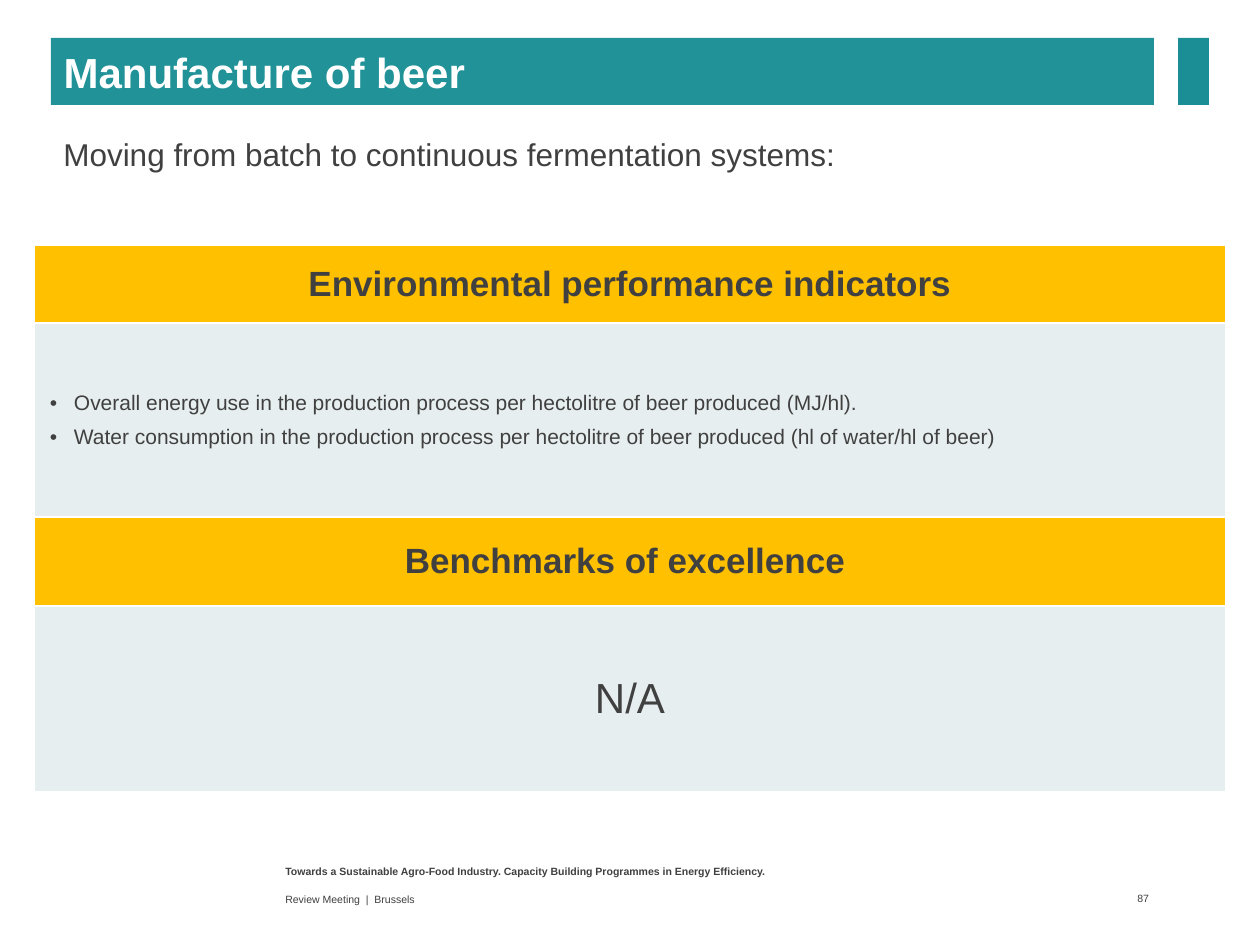
from dataclasses import dataclass

from lxml import etree
from pptx import Presentation
from pptx import util as u
from pptx.dml.color import RGBColor
from pptx.enum import shapes, text
from pptx.oxml import ns

SCALE = 914400 / 126


@dataclass(frozen=True)
class Theme:
    font: str = "Arial"
    ink: str = "404040"
    white: str = "FFFFFF"
    bar: str = "209298"
    tab: str = "1B8E95"
    header: str = "FFC000"
    body: str = "E7EEEF"
    title_size: int = 24
    header_size: int = 20
    lead_size: int = 18
    bullet_size: int = 12
    footer_size: int = 6


THEME = Theme()
ALIGN = text.PP_ALIGN
MIDDLE = text.MSO_ANCHOR.MIDDLE


def px(n):
    return u.Emu(round(n * SCALE))


def fill(target, color):
    target.fill.solid()
    target.fill.fore_color.rgb = RGBColor.from_string(color)


def style(p, size, color=THEME.ink, bold=False, align=ALIGN.LEFT):
    p.alignment = align
    for r in p.runs:
        r.font.name = THEME.font
        r.font.size = u.Pt(size)
        r.font.bold = bold
        r.font.color.rgb = RGBColor.from_string(color)


def add_label(s, box, words, size, bold=False, align=ALIGN.LEFT, anchor=MIDDLE):
    sp = s.shapes.add_textbox(*map(px, box))
    tf = sp.text_frame
    tf.word_wrap = True
    tf.vertical_anchor = anchor
    tf.text = words
    style(tf.paragraphs[0], size, bold=bold, align=align)
    return tf


def add_title(s, box, words):
    x, y, w, h = box
    sp = s.shapes.title
    sp.left, sp.top, sp.width, sp.height = map(px, (x, y, w - 55, h))
    fill(sp, THEME.bar)
    tf = sp.text_frame
    tf.text = words
    tf.word_wrap = True
    tf.auto_size = text.MSO_AUTO_SIZE.NONE
    tf.vertical_anchor = MIDDLE
    style(tf.paragraphs[0], THEME.title_size, THEME.white, True)

    tab = s.shapes.add_shape(shapes.MSO_SHAPE.RECTANGLE, *map(px, (x + w - 31, y, 31, h)))
    tab.shadow.inherit = False
    fill(tab, THEME.tab)
    tab.line.fill.background()


def add_borders(cell):
    tc_pr = cell._tc.get_or_add_tcPr()
    for i, side in enumerate(("lnL", "lnR", "lnT", "lnB")):
        ln = etree.Element(ns.qn(f"a:{side}"), w=str(u.Pt(1)))
        solid = etree.SubElement(ln, ns.qn("a:solidFill"))
        etree.SubElement(solid, ns.qn("a:srgbClr"), val=THEME.white)
        tc_pr.insert(i, ln)


def add_bullet(p, indent):
    p_pr = p._p.get_or_add_pPr()
    p_pr.set("marL", str(px(indent)))
    p_pr.set("indent", str(-px(indent)))
    etree.SubElement(p_pr, ns.qn("a:buFont"), typeface=THEME.font)
    etree.SubElement(p_pr, ns.qn("a:buChar"), char="•")


def add_panel(s, box, header_height, heading, lines, size, bullets=False):
    x, y, w, h = box
    table = s.shapes.add_table(2, 1, *map(px, box)).table
    table.horz_banding = False
    table.columns[0].width = px(w)
    table.rows[0].height = px(header_height)
    table.rows[1].height = px(h - header_height)
    head, body = table.cell(0, 0), table.cell(1, 0)
    for cell, color in ((head, THEME.header), (body, THEME.body)):
        fill(cell, color)
        add_borders(cell)
        cell.vertical_anchor = MIDDLE

    head.text_frame.text = heading
    style(head.text_frame.paragraphs[0], THEME.header_size, bold=True, align=ALIGN.CENTER)

    body.margin_left = body.margin_right = px(16)
    body.margin_top = body.margin_bottom = px(8)
    body.text_frame.text = "\n".join(lines)
    for p in body.text_frame.paragraphs:
        p.space_after = u.Pt(6)
        if bullets:
            add_bullet(p, 24)
        style(p, size, align=ALIGN.JUSTIFY if bullets else ALIGN.CENTER)


def add_footer(s, box, programme, meeting, number):
    x, y, w, h = box
    add_label(s, (x, y, 693, 26), programme, THEME.footer_size, bold=True,
              anchor=text.MSO_ANCHOR.TOP)
    add_label(s, (x, y + 28, 693, 24), meeting, THEME.footer_size)
    tf = add_label(s, (x + w - 70, y + 27, 70, 25), number, THEME.footer_size,
                   align=ALIGN.RIGHT)
    tf.margin_right = px(5)


def main():
    prs = Presentation()
    prs.slide_width, prs.slide_height = px(1260), px(945)
    s = prs.slides.add_slide(prs.slide_layouts[5])
    add_title(s, (51, 38, 1158, 67), "Manufacture of beer")
    add_label(s, (51, 129, 1158, 50),
              "Moving from batch to continuous fermentation systems:", THEME.lead_size)
    add_panel(s, (34, 245, 1192, 272), 78, "Environmental performance indicators", (
        "Overall energy use in the production process per hectolitre of beer produced (MJ/hl).",
        "Water consumption in the production process per hectolitre of beer produced "
        "(hl of water/hl of beer)",
    ), THEME.bullet_size, bullets=True)
    add_panel(s, (34, 517, 1192, 275), 89, "Benchmarks of excellence ", ("N/A",),
              THEME.title_size)
    add_footer(s, (273, 859, 881, 52),
               "Towards a Sustainable Agro-Food Industry. "
               "Capacity Building Programmes in Energy Efficiency.",
               "Review Meeting  |  Brussels", "87")
    prs.save("out.pptx")


if __name__ == "__main__":
    main()
